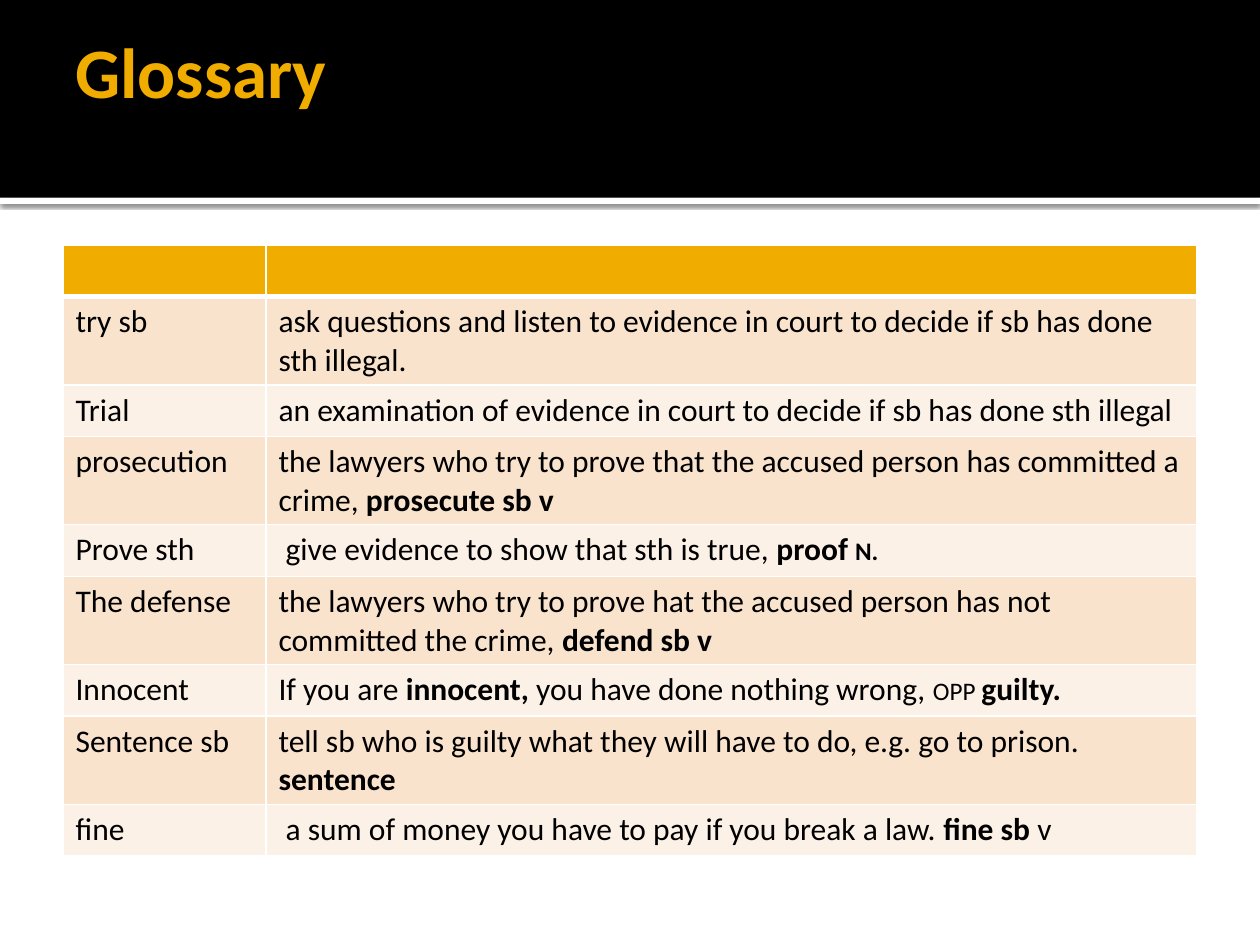
import pptx
import pptx.util
import pptx.dml.color
import pptx.enum.shapes
import pptx.oxml
import pptx.oxml.ns
from dataclasses import dataclass
from lxml import etree

Pt = pptx.util.Pt


@dataclass(frozen=True)
class Theme:
    font: str = "Calibri"
    title: float = 40.5
    body: float = 18
    gold: str = "F0AD00"
    black: str = "000000"
    white: str = "FFFFFF"
    bands: tuple = ("F9E3CC", "FCF1E7")
    thin: float = 1
    thick: float = 3


THEME = Theme()
WIDTH, HEIGHT = 720, 540
BAND = 113
COLS = (116, 532)
ROW = 29.5

TERMS = [
    ("try sb", [("ask questions and listen to evidence in court to decide "
                 "if sb has done sth illegal.", "")]),
    ("Trial", [("an examination of evidence in court to decide "
                "if sb has done sth illegal", "")]),
    ("prosecution", [("the lawyers who try to prove that the accused person "
                      "has committed a crime, ", ""),
                     ("prosecute sb v", "bold")]),
    ("Prove sth", [(" give evidence to show that sth is true, ", ""),
                   ("proof ", "bold"), ("n.", "bold small")]),
    ("The defense", [("the lawyers who try to prove hat the accused person "
                      "has not committed the crime, ", ""),
                     ("defend sb v", "bold")]),
    ("Innocent", [("If you are ", ""), ("innocent, ", "bold"),
                  ("you have done nothing wrong, ", ""),
                  ("opp ", "small"), ("guilty.", "bold")]),
    ("Sentence sb", [("tell sb who is guilty what they will have to do, "
                      "e.g. go to prison. ", ""), ("sentence", "bold")]),
    ("fine", [(" a sum of money you have to pay if you break a law. ", ""),
              ("fine sb ", "bold"), ("v", "")]),
]


def rgb(code):
    return pptx.dml.color.RGBColor.from_string(code)


def style(font, size, color, bold=False):
    font.name = THEME.font
    font.size = Pt(size)
    font.bold = bold
    font.color.rgb = rgb(color)


def add_bar(slide, top, height, color):
    kind = pptx.enum.shapes.MSO_SHAPE.RECTANGLE
    bar = slide.shapes.add_shape(kind, 0, Pt(top), Pt(WIDTH), Pt(height))
    bar.fill.solid()
    bar.fill.fore_color.rgb = rgb(color)
    bar.line.fill.background()
    bar.shadow.inherit = False
    return bar


def add_shade(bar):
    effects = bar._element.spPr.find(pptx.oxml.ns.qn("a:effectLst"))
    effects.append(pptx.oxml.parse_xml(
        f'<a:outerShdw {pptx.oxml.ns.nsdecls("a")} blurRad="{Pt(2.5)}" '
        f'dist="{Pt(0.8)}" dir="5400000" algn="t" rotWithShape="0">'
        f'<a:srgbClr val="{THEME.black}"><a:alpha val="60000"/></a:srgbClr>'
        '</a:outerShdw>'))


def add_title(slide, text):
    box = slide.shapes.add_textbox(Pt(36), Pt(12), Pt(648), Pt(99))
    frame = box.text_frame
    frame.word_wrap = True
    frame.margin_right = Pt(3.6)
    frame.text = text
    style(frame.paragraphs[0].runs[0].font, THEME.title, THEME.gold, True)


def set_edge(cell, side, width):
    line = etree.SubElement(cell._tc.get_or_add_tcPr(),
                            pptx.oxml.ns.qn(f"a:ln{side}"), w=str(Pt(width)))
    fill = etree.SubElement(line, pptx.oxml.ns.qn("a:solidFill"))
    etree.SubElement(fill, pptx.oxml.ns.qn("a:srgbClr"), val=THEME.white)


def paint_cell(cell, row):
    edges = {"L": THEME.thin, "R": THEME.thin,
             "T": THEME.thick if row == 1 else THEME.thin,
             "B": THEME.thick if row == 0 else THEME.thin}
    for side, width in edges.items():
        set_edge(cell, side, width)
    cell.fill.solid()
    color = THEME.bands[(row - 1) % 2] if row else THEME.gold
    cell.fill.fore_color.rgb = rgb(color)


def write_cell(cell, parts):
    para = cell.text_frame.paragraphs[0]
    for text, look in parts:
        run = para.add_run()
        run.text = text
        style(run.font, THEME.body, THEME.black, "bold" in look)
        if "small" in look:
            run._r.get_or_add_rPr().set("cap", "small")


def add_terms(slide, terms):
    count = len(terms) + 1
    table = slide.shapes.add_table(count, len(COLS), Pt(36), Pt(140),
                                   Pt(sum(COLS)), Pt(ROW * count)).table
    table.first_row = False
    table.horz_banding = False
    for col, width in zip(table.columns, COLS):
        col.width = Pt(width)
    for index, row in enumerate(table.rows):
        row.height = Pt(ROW)
        for cell in row.cells:
            paint_cell(cell, index)
    for index, (term, parts) in enumerate(terms, 1):
        write_cell(table.cell(index, 0), [(term, "")])
        write_cell(table.cell(index, 1), parts)


def main():
    deck = pptx.Presentation()
    deck.slide_width, deck.slide_height = Pt(WIDTH), Pt(HEIGHT)
    slide = deck.slides.add_slide(deck.slide_layouts[6])
    add_shade(add_bar(slide, BAND, 3.6, THEME.white))
    add_bar(slide, 0, BAND, THEME.black)
    add_title(slide, "Glossary")
    add_terms(slide, TERMS)
    deck.save("out.pptx")


if __name__ == "__main__":
    main()
